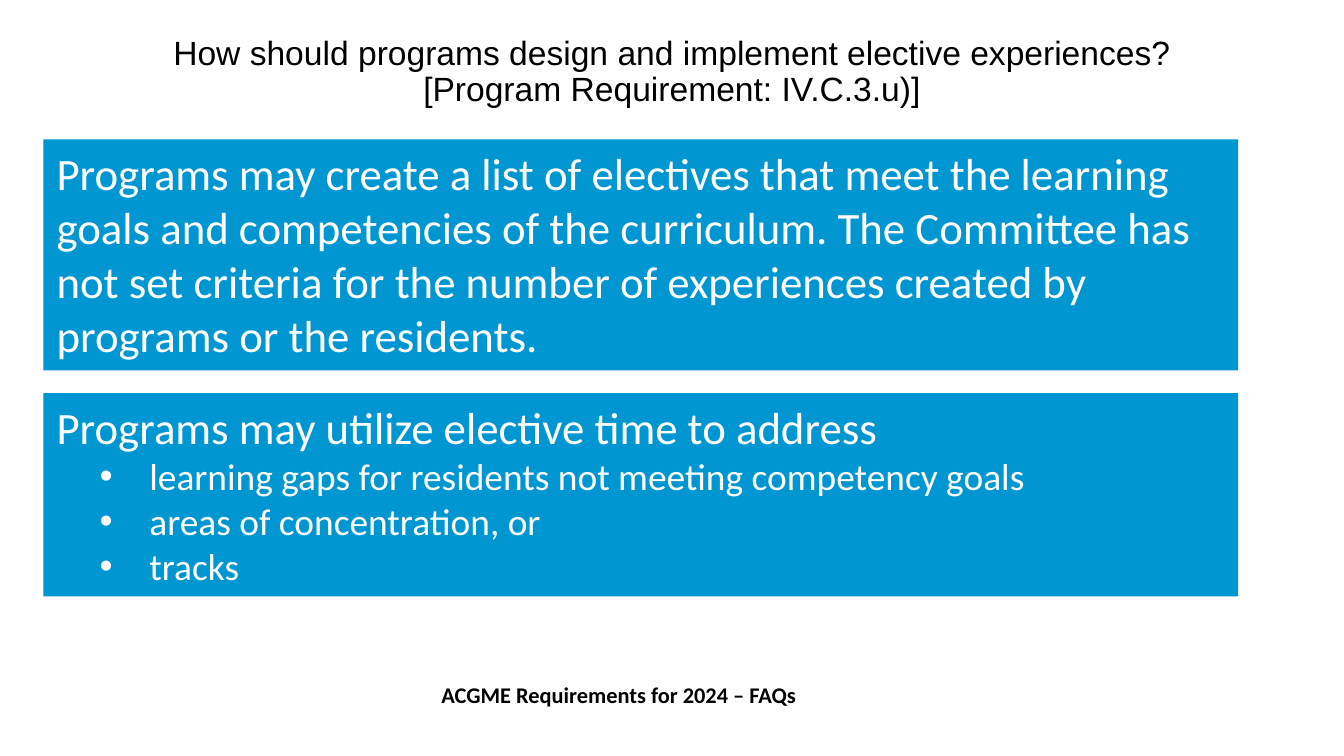
from lxml import etree
from pptx import Presentation
from pptx.dml.color import RGBColor
from pptx.enum.shapes import MSO_SHAPE
from pptx.enum.text import MSO_ANCHOR, PP_ALIGN
from pptx.oxml.ns import qn
from pptx.util import Inches, Pt

RECTANGLE = MSO_SHAPE.RECTANGLE
TOP, MIDDLE = MSO_ANCHOR.TOP, MSO_ANCHOR.MIDDLE
LEFT, CENTER = PP_ALIGN.LEFT, PP_ALIGN.CENTER
COLORS = {"panel": "0096D2", "light": "FFFFFF", "dark": "000000"}

deck = Presentation()
deck.slide_width = Inches(10)
deck.slide_height = deck.slide_width * 9 // 16
COLUMN, ROW = deck.slide_width / 100, deck.slide_height / 100
page = deck.slides.add_slide(deck.slide_layouts[6])


def place(left, top, width, height):
    return int(left * COLUMN), int(top * ROW), int(width * COLUMN), int(height * ROW)


def write(para, text, size, color, align=LEFT, font="Calibri", bold=False):
    para.text = text
    para.alignment = align
    para.font.name = font
    para.font.size = Pt(size)
    para.font.bold = bold
    para.font.color.rgb = RGBColor.from_string(COLORS[color])


title = page.shapes.add_textbox(*place(11.3, 0.6, 77.4, 18)).text_frame
title.word_wrap = True
title.vertical_anchor = MIDDLE
title.paragraphs[0].line_spacing = 0.9
write(
    title.paragraphs[0],
    "How should programs design and implement elective experiences?\v"
    "[Program Requirement: IV.C.3.u)]",
    18, "dark", CENTER, "Arial",
)

panels = [
    (18.45, 30.55,
     "Programs may create a list of electives that meet the learning goals and "
     "competencies of the curriculum. The Committee has not set criteria for the "
     "number of experiences created by programs or the residents.",
     []),
    (52, 26.9,
     "Programs may utilize elective time to address",
     ["learning gaps for residents not meeting competency goals",
      "areas of concentration, or",
      "tracks"]),
]
for top, height, statement, points in panels:
    panel = page.shapes.add_shape(RECTANGLE, *place(3.23, top, 88.9, height))
    panel.shadow.inherit = False
    panel.fill.solid()
    panel.fill.fore_color.rgb = RGBColor.from_string(COLORS["panel"])
    panel.line.fill.background()
    frame = panel.text_frame
    frame.word_wrap = True
    frame.vertical_anchor = TOP
    write(frame.paragraphs[0], statement, 24, "light")
    for point in points:
        para = frame.add_paragraph()
        properties = para._p.get_or_add_pPr()
        properties.set("marL", str(Inches(0.69)))
        properties.set("indent", str(Inches(-0.37)))
        etree.SubElement(properties, qn("a:buFont")).set("typeface", "Arial")
        etree.SubElement(properties, qn("a:buChar")).set("char", "•")
        write(para, point, 20, "light")

footer = page.shapes.add_textbox(*place(31.7, 89.25, 28.7, 5.4)).text_frame
footer.word_wrap = True
write(footer.paragraphs[0], "ACGME Requirements for 2024 – FAQs", 12, "dark", CENTER, bold=True)

deck.save("out.pptx")
